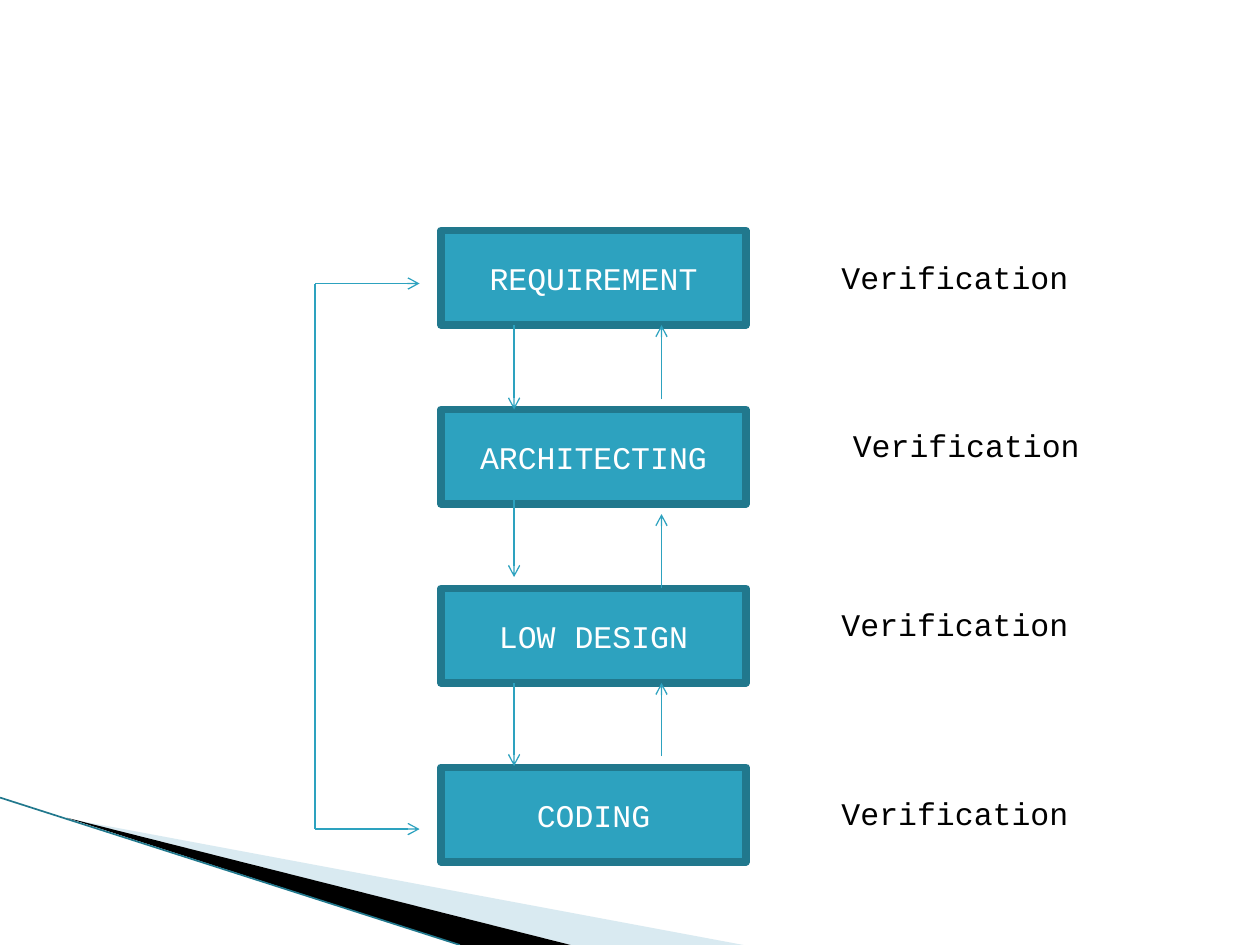
from typing import NamedTuple

from pptx import Presentation
from pptx.dml.color import RGBColor
from pptx.enum.shapes import MSO_CONNECTOR, MSO_SHAPE
from pptx.enum.text import MSO_ANCHOR, MSO_AUTO_SIZE, PP_ALIGN
from pptx.oxml.ns import qn
from pptx.util import Inches, Pt
from lxml.etree import SubElement

COLORS = {
    "box": "2DA2BF",
    "border": "21788D",
    "pale": "A0CBDC",
    "black": "000000",
    "white": "FFFFFF",
}
FONT = {"name": "Courier New", "size": Pt(18)}
BOX_LEFT, BOX_TOP, BOX_WIDTH, BOX_HEIGHT, BOX_STEP = 3.5, 1.83, 2.42, 0.75, 1.42
DOWN_X, UP_X, LOOP_X, LOOP_END = 4.08, 5.25, 2.5, 3.33
LOOP_TOP, LOOP_BOTTOM = 2.25, 6.58


class Stage(NamedTuple):
    name: str
    label_left: float
    label_top: float


class Line(NamedTuple):
    start: tuple[float, float]
    end: tuple[float, float]
    arrow: bool = True
    color: str = "box"
    width: float = 0.75


class Wedge(NamedTuple):
    points: list[tuple[float, float]]
    color: str
    opacity: int = 100


STAGES = [
    Stage("REQUIREMENT", 6.58, 2),
    Stage("ARCHITECTING", 6.67, 3.33),
    Stage("LOW DESIGN", 6.58, 4.75),
    Stage("CODING", 6.58, 6.25),
]
WEDGES = [
    Wedge([(0.55, 6.5), (5.9, 7.5), (4.53, 7.5)], "pale", 40),
    Wedge([(0.53, 6.49), (4.53, 7.5), (3.65, 7.5)], "black"),
]
LINES = [
    Line((DOWN_X, 2.58), (DOWN_X, 3.25)),
    Line((DOWN_X, 3.97), (DOWN_X, 4.58)),
    Line((DOWN_X, 5.42), (DOWN_X, 6.08)),
    Line((UP_X, 6), (UP_X, 5.42)),
    Line((UP_X, 4.67), (UP_X, 4.08)),
    Line((UP_X, 3.17), (UP_X, 2.58)),
    Line((LOOP_X, LOOP_TOP), (LOOP_X, LOOP_BOTTOM), arrow=False),
    Line((LOOP_X, LOOP_TOP), (LOOP_END, LOOP_TOP)),
    Line((LOOP_X, LOOP_BOTTOM), (LOOP_END, LOOP_BOTTOM)),
]
SWEEP_EDGE = Line((0, 6.33), (3.65, 7.5), arrow=False, color="border", width=0.95)


def rgb(color: str) -> RGBColor:
    return RGBColor.from_string(COLORS[color])


def fill_solid(shape, color: str) -> None:
    shape.shadow.inherit = False
    shape.fill.solid()
    shape.fill.fore_color.rgb = rgb(color)


def write(shape, text: str, color: str, alignment: PP_ALIGN) -> None:
    paragraph = shape.text_frame.paragraphs[0]
    paragraph.alignment = alignment
    run = paragraph.add_run()
    run.text = text
    for attribute, value in FONT.items():
        setattr(run.font, attribute, value)
    run.font.color.rgb = rgb(color)


def draw_wedge(slide, wedge: Wedge) -> None:
    points = [(Inches(x), Inches(y)) for x, y in wedge.points]
    builder = slide.shapes.build_freeform(*points[0])
    builder.add_line_segments(points[1:], close=True)
    shape = builder.convert_to_shape()
    fill_solid(shape, wedge.color)
    shape.line.fill.background()
    if wedge.opacity < 100:
        color = shape.fill._xPr.find(qn("a:solidFill"))[0]
        SubElement(color, qn("a:alpha"), val=str(wedge.opacity * 1000))


def draw_line(slide, line: Line) -> None:
    ends = [Inches(value) for value in (*line.start, *line.end)]
    connector = slide.shapes.add_connector(MSO_CONNECTOR.STRAIGHT, *ends)
    connector.line.color.rgb = rgb(line.color)
    connector.line.width = Pt(line.width)
    if line.arrow:
        SubElement(connector.line._get_or_add_ln(), qn("a:tailEnd"), type="arrow")
    SubElement(connector._element.spPr, qn("a:effectLst"))


def draw_box(slide, stage: Stage, top: float) -> None:
    box = slide.shapes.add_shape(
        MSO_SHAPE.RECTANGLE, Inches(BOX_LEFT), Inches(top), Inches(BOX_WIDTH), Inches(BOX_HEIGHT)
    )
    fill_solid(box, "box")
    box.line.color.rgb = rgb("border")
    box.line.width = Pt(4.33)
    box.text_frame.vertical_anchor = MSO_ANCHOR.MIDDLE
    write(box, stage.name, "white", PP_ALIGN.CENTER)


def draw_label(slide, stage: Stage) -> None:
    label = slide.shapes.add_textbox(
        Inches(stage.label_left), Inches(stage.label_top), Inches(2.25), Inches(0.42)
    )
    label.text_frame.word_wrap = True
    label.text_frame.auto_size = MSO_AUTO_SIZE.SHAPE_TO_FIT_TEXT
    write(label, "Verification", "black", PP_ALIGN.LEFT)


def main() -> None:
    presentation = Presentation()
    presentation.slide_width, presentation.slide_height = Inches(10), Inches(7.5)
    slide = presentation.slides.add_slide(presentation.slide_layouts[6])
    for wedge in WEDGES:
        draw_wedge(slide, wedge)
    draw_line(slide, SWEEP_EDGE)
    for index, stage in enumerate(STAGES):
        draw_box(slide, stage, BOX_TOP + index * BOX_STEP)
        draw_label(slide, stage)
    for line in LINES:
        draw_line(slide, line)
    presentation.save("out.pptx")


if __name__ == "__main__":
    main()
